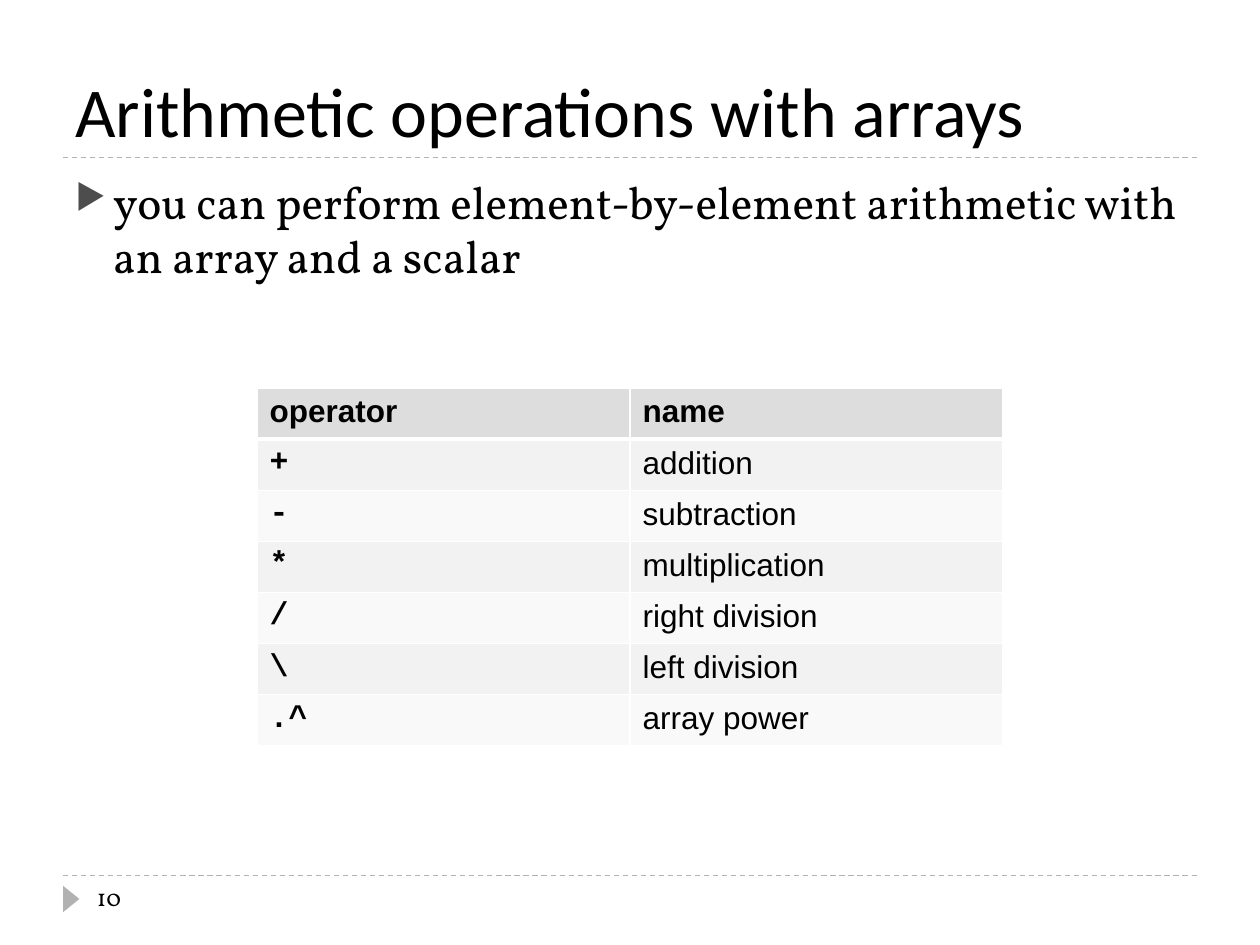
import pptx
import pptx.dml.color
import pptx.enum.dml
import pptx.enum.shapes
import pptx.enum.text
import pptx.oxml.ns
import pptx.util
from lxml import etree
from pptx.dml.color import RGBColor
from pptx.util import Inches

BLACK = RGBColor(0x00, 0x00, 0x00)
WHITE = RGBColor(0xFF, 0xFF, 0xFF)
RULE_GRAY = RGBColor(0xB2, 0xB2, 0xB2)
BULLET_GRAY = RGBColor(0x4D, 0x4D, 0x4D)
HEADER_FILL = RGBColor(0xDD, 0xDD, 0xDD)
ROW_FILLS = (RGBColor(0xF2, 0xF2, 0xF2), RGBColor(0xF9, 0xF9, 0xF9))

OPERATORS = [
    ("operator", "name"),
    ("+", "addition"),
    ("-", "subtraction"),
    ("*", "multiplication"),
    ("/", "right division"),
    ("\\", "left division"),
    (".^", "array power"),
]


def add_child(parent, tag, **attributes):
    return etree.SubElement(parent, pptx.oxml.ns.qn(tag), attributes)


def style_font(paragraph, name, size, bold=False):
    font = paragraph.font
    font.name = name
    font.size = pptx.util.Pt(size)
    font.bold = bold
    font.color.rgb = BLACK


def add_text(slide, box, text, font_name, size, anchor=pptx.enum.text.MSO_ANCHOR.TOP):
    text_frame = slide.shapes.add_textbox(*box).text_frame
    text_frame.word_wrap = True
    text_frame.vertical_anchor = anchor
    paragraph = text_frame.paragraphs[0]
    paragraph.text = text
    style_font(paragraph, font_name, size)
    return paragraph


def add_rule(slide, left, top, width):
    rule = slide.shapes.add_connector(
        pptx.enum.shapes.MSO_CONNECTOR.STRAIGHT, left, top, left + width, top)
    rule.line.color.rgb = RULE_GRAY
    rule.line.width = pptx.util.Pt(0.75)
    rule.line.dash_style = pptx.enum.dml.MSO_LINE.DASH
    add_child(rule._element.spPr, "a:effectLst")


def add_title(slide, left, top, width, height):
    add_rule(slide, left, top + height, width)
    add_text(slide, (left, top, width, height), "Arithmetic operations with arrays",
             "Calibri", 40, pptx.enum.text.MSO_ANCHOR.BOTTOM)


def add_body(slide, left, top, width, height):
    paragraph = add_text(
        slide, (left, top, width, height),
        "you can perform element-by-element arithmetic with an array and a scalar",
        "Vollkorn", 26)
    paragraph.space_before = pptx.util.Pt(6)

    # Hanging triangle bullet
    properties = paragraph._p.get_or_add_pPr()
    properties.set("marL", str(Inches(0.3)))
    properties.set("indent", str(-Inches(0.3)))
    add_child(add_child(properties, "a:buClr"), "a:srgbClr", val=str(BULLET_GRAY))
    add_child(properties, "a:buSzPct", val="76000")
    add_child(properties, "a:buChar", char="▶")


def set_borders(cell, bottom_width):
    properties = cell._tc.get_or_add_tcPr()
    widths = {"a:lnL": 1, "a:lnR": 1, "a:lnT": 1, "a:lnB": bottom_width}
    for position, (tag, width) in enumerate(widths.items()):
        line = add_child(properties, tag, w=str(pptx.util.Pt(width)))
        add_child(add_child(line, "a:solidFill"), "a:srgbClr", val=str(WHITE))
        properties.insert(position, line)


def add_operator_table(slide, left, top, width, height):
    table = slide.shapes.add_table(
        len(OPERATORS), len(OPERATORS[0]), left, top, width, height).table
    for row, texts in enumerate(OPERATORS):
        is_header = row == 0
        for column, text in enumerate(texts):
            cell = table.cell(row, column)
            cell.fill.solid()
            cell.fill.fore_color.rgb = HEADER_FILL if is_header else ROW_FILLS[(row - 1) % 2]
            set_borders(cell, 3 if is_header else 1)
            is_symbol = column == 0 and not is_header
            paragraph = cell.text_frame.paragraphs[0]
            paragraph.text = text
            style_font(paragraph, "Courier New" if is_symbol else "Arial", 18,
                       bold=is_header or is_symbol)


def add_footer(slide, left, top, width, height):
    add_rule(slide, left, top, width)

    # Marker pointing at the page number
    marker = slide.shapes.add_shape(
        pptx.enum.shapes.MSO_SHAPE.ISOSCELES_TRIANGLE,
        left - Inches(0.04), top + Inches(0.12), Inches(0.21), Inches(0.13))
    marker.rotation = 90
    marker.shadow.inherit = False
    marker.fill.solid()
    marker.fill.fore_color.rgb = RULE_GRAY
    marker.line.fill.background()

    add_text(slide, (left + Inches(0.17), top, Inches(2.17), height), "10", "Vollkorn", 14)


def main():
    presentation = pptx.Presentation()
    presentation.slide_width = Inches(10)
    presentation.slide_height = Inches(7.5)
    slide = presentation.slides.add_slide(presentation.slide_layouts[6])

    left, width = Inches(0.5), Inches(9)
    add_title(slide, left, Inches(0.17), width, Inches(1.08))
    add_body(slide, left, Inches(1.33), width, Inches(5.4))
    add_footer(slide, left, Inches(6.95), width, Inches(0.4))
    add_operator_table(slide, Inches(2.04), Inches(3.08), Inches(5.92), Inches(2.84))

    presentation.save("out.pptx")


if __name__ == "__main__":
    main()
